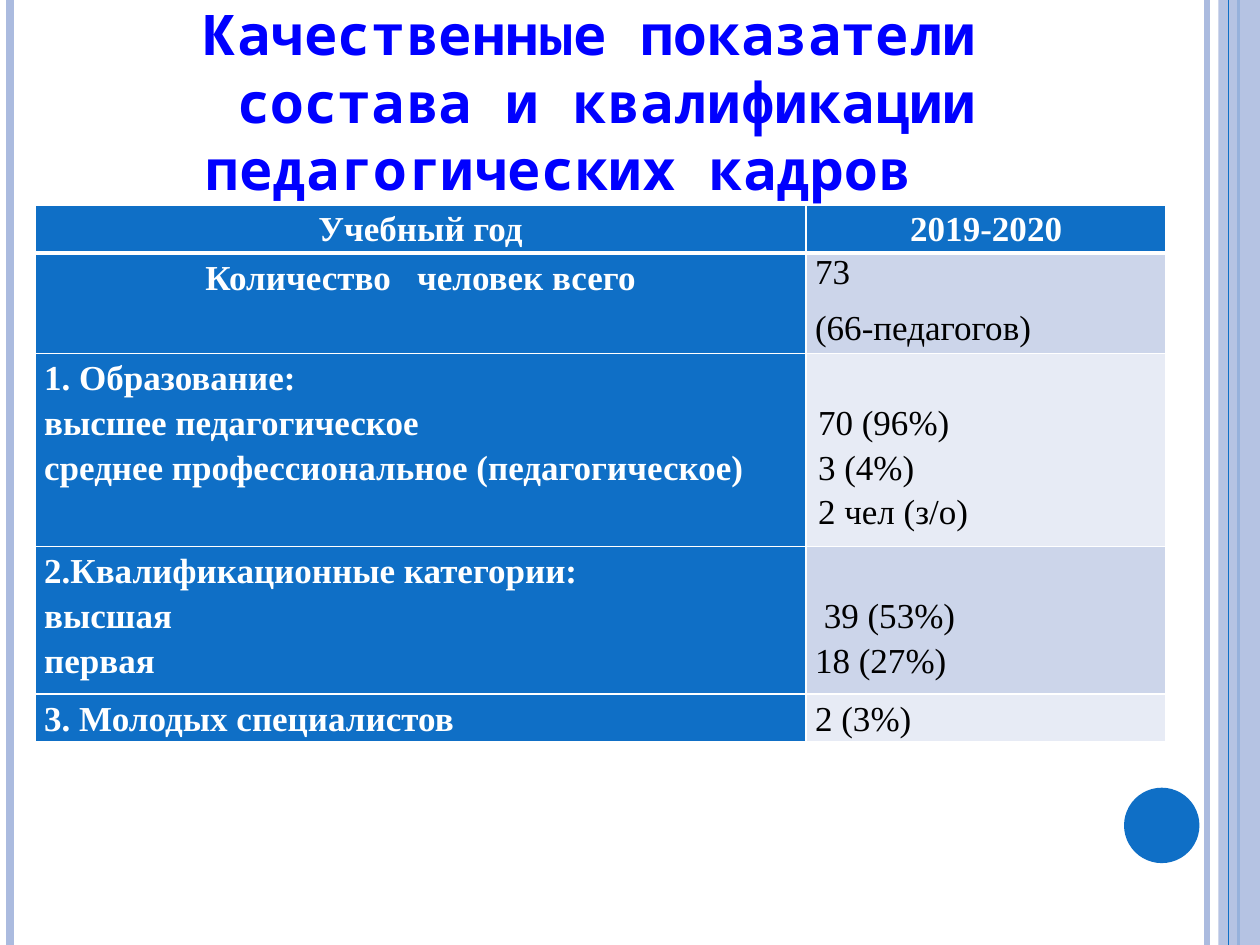
from lxml import etree
from pptx import Presentation
from pptx import util as u
from pptx.dml.color import RGBColor
from pptx.enum import shapes, text
from pptx.oxml import ns

CENTER, JUSTIFY, LEFT = text.PP_ALIGN.CENTER, text.PP_ALIGN.JUSTIFY, text.PP_ALIGN.LEFT

THEME = {
    "blue": "0F6FC6", "pale": "ABBBDF", "title": "0000FF",
    "white": "FFFFFF", "black": "000000", "bands": ("E7EBF5", "CCD5EA"),
    "title_font": "Noto Sans Mono", "title_size": 32,
    "table_font": "Times New Roman", "table_size": 20,
}

TITLE = ["Качественные показатели ", "состава и квалификации педагогических кадров "]

HEADER = ["Учебный год", "2019-2020"]
INDICATORS = [
    {"height": 2.03, "align": CENTER, "label": ["Количество   человек всего"],
     "value": ["73", "(66-педагогов)"], "spacing": 1, "after": 10},
    {"height": 3.89, "align": JUSTIFY,
     "label": ["1. Образование:", "высшее педагогическое",
               "среднее профессиональное (педагогическое)"],
     "value": ["70 (96%)", "3 (4%)", "2 чел (з/о)"], "top": 0.9, "indent": 0.06},
    {"height": 2.97, "align": JUSTIFY,
     "label": ["2.Квалификационные категории:", "высшая", "первая "],
     "value": [" 39 (53%)", "18 (27%)"], "top": 0.9},
    {"height": 0.97, "align": LEFT, "label": ["3. Молодых специалистов"],
     "value": ["2 (3%)"]},
]
HEADER_HEIGHT = 0.97
COLUMNS = [15.54, 7.26]

BACK_RULES = [(24.33, "pale", 3), (0.2, "pale", 4.5), (24.97, "blue", 1.5)]
FRONT_RULES = [(24.77, "blue", 0.75)]
SLIDE_W, SLIDE_H = 25.4, 19.05


def color(name):
    return RGBColor.from_string(THEME.get(name, name))


def add_rules(slide, rules):
    for x, tone, width in rules:
        rule = slide.shapes.add_connector(
            shapes.MSO_CONNECTOR.STRAIGHT, u.Cm(x), 0, u.Cm(x), u.Cm(SLIDE_H))
        rule.line.color.rgb = color(tone)
        rule.line.width = u.Pt(width)
        etree.SubElement(rule._element.spPr, ns.qn("a:effectLst"))


def add_ornament(slide, preset, box, tone):
    ornament = slide.shapes.add_shape(preset, *map(u.Cm, box))
    ornament.shadow.inherit = False
    ornament.fill.solid()
    ornament.fill.fore_color.rgb = color(tone)
    ornament.line.fill.background()
    return ornament


def write(frame, lines, font, size, tone, bold, align, spacing=1, after=0, indent=0, first=0):
    frame.text = "\n".join(lines)
    for paragraph in frame.paragraphs:
        paragraph.alignment = align
        paragraph.line_spacing = spacing
        paragraph.space_after = u.Pt(after)
        properties = paragraph._p.get_or_add_pPr()
        properties.set("marL", str(u.Cm(indent)))
        properties.set("indent", str(u.Cm(first)))
        for run in paragraph.runs:
            run.font.name, run.font.size, run.font.bold = font, u.Pt(size), bold
            run.font.color.rgb = color(tone)


def style_cell(cell, fill, widths, top=0):
    cell.margin_left = cell.margin_right = u.Cm(0.18)
    cell.margin_top, cell.margin_bottom = u.Cm(top), 0
    properties = cell._tc.get_or_add_tcPr()
    for side, width in zip("LRTB", widths):
        border = etree.SubElement(properties, ns.qn(f"a:ln{side}"), w=str(u.Pt(width)))
        paint = etree.SubElement(border, ns.qn("a:solidFill"))
        etree.SubElement(paint, ns.qn("a:srgbClr"), val=THEME["white"])
    cell.fill.solid()
    cell.fill.fore_color.rgb = color(fill)


def write_cell(cell, lines, tone, bold, align, **layout):
    layout = {"spacing": 1.15, **layout}
    write(cell.text_frame, lines, THEME["table_font"], THEME["table_size"],
          tone, bold, align, **layout)


def add_indicators(slide):
    heights = [HEADER_HEIGHT] + [item["height"] for item in INDICATORS]
    table = slide.shapes.add_table(
        len(heights), len(COLUMNS), u.Cm(0.71), u.Cm(4.13),
        u.Cm(sum(COLUMNS)), u.Cm(sum(heights))).table
    for column, width in zip(table.columns, COLUMNS):
        column.width = u.Cm(width)
    for row, height in zip(table.rows, heights):
        row.height = u.Cm(height)
    for column, heading in enumerate(HEADER):
        cell = table.cell(0, column)
        style_cell(cell, "blue", (1, 1, 1, 3))
        write_cell(cell, [heading], "white", True, CENTER)
    for row, item in enumerate(INDICATORS, 1):
        label, value = table.cell(row, 0), table.cell(row, 1)
        widths = (1, 1, 3 if row == 1 else 1, 1)
        style_cell(label, "blue", widths)
        write_cell(label, item["label"], "white", True, item["align"])
        style_cell(value, THEME["bands"][row % 2], widths, item.get("top", 0))
        layout = {key: item[key] for key in ("spacing", "after", "indent") if key in item}
        write_cell(value, item["value"], "black", False, LEFT, **layout)


def add_title(slide):
    title = slide.shapes.add_textbox(u.Cm(0.3), u.Cm(0.53), u.Cm(22.61), u.Cm(3))
    frame = title.text_frame
    frame.word_wrap = True
    frame.vertical_anchor = text.MSO_ANCHOR.MIDDLE
    write(frame, TITLE, THEME["title_font"], THEME["title_size"],
          "title", True, CENTER, first=1.27)


def main():
    deck = Presentation()
    deck.slide_width, deck.slide_height = u.Cm(SLIDE_W), u.Cm(SLIDE_H)
    slide = deck.slides.add_slide(deck.slide_layouts[6])
    add_rules(slide, BACK_RULES)
    band = add_ornament(slide, shapes.MSO_SHAPE.RECTANGLE,
                        (24.56, 0, SLIDE_W - 24.56, SLIDE_H), "pale")
    tint = band._element.spPr.find(".//" + ns.qn("a:srgbClr"))
    etree.SubElement(tint, ns.qn("a:alpha"), val="87000")
    add_rules(slide, FRONT_RULES)
    add_ornament(slide, shapes.MSO_SHAPE.OVAL, (22.66, 15.88, 1.52, 1.52), "blue")
    add_indicators(slide)
    add_title(slide)
    deck.save("out.pptx")


if __name__ == "__main__":
    main()
